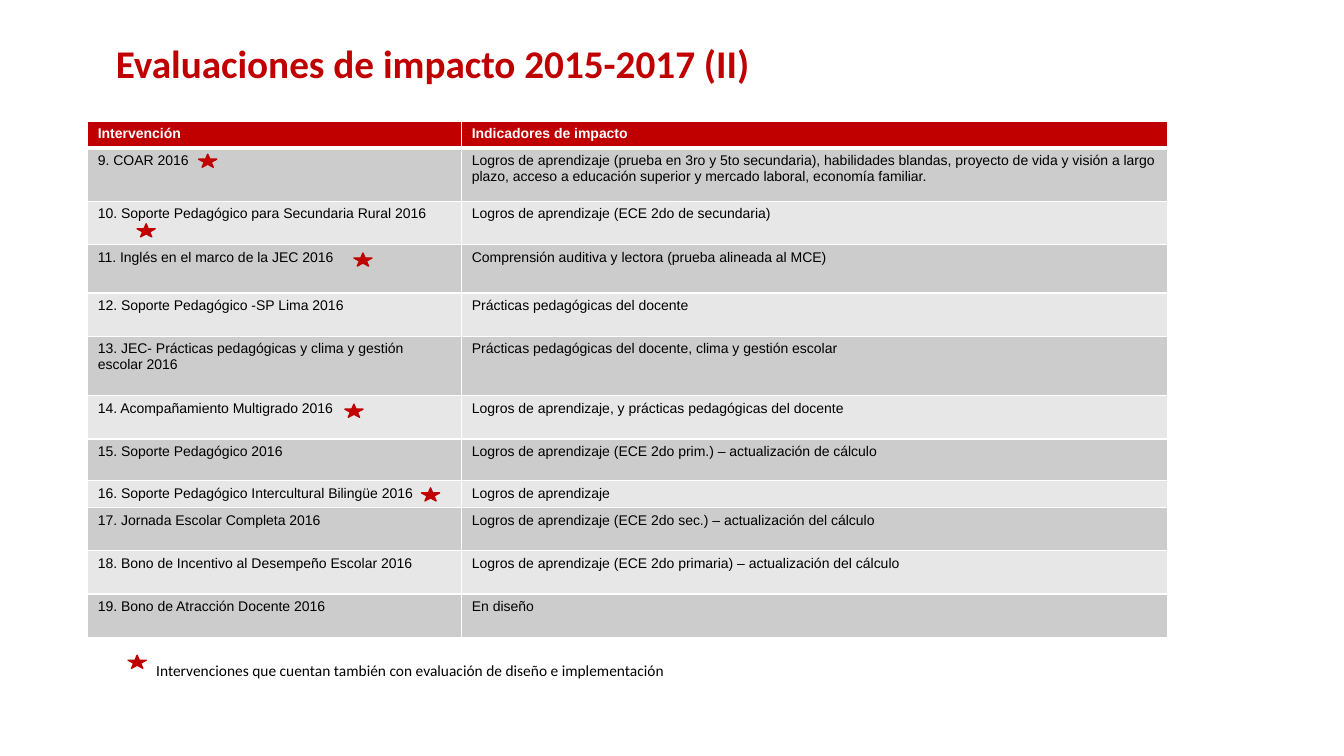
"""Build the slide that lists the 2015-2017 impact evaluations."""
import dataclasses
import itertools
import typing

import lxml.etree
import pptx
import pptx.dml.color
import pptx.enum.shapes
import pptx.enum.text
import pptx.oxml.ns
import pptx.util


@dataclasses.dataclass(frozen=True)
class Theme:
    accent: str = "C00000"
    text: str = "000000"
    inverse: str = "FFFFFF"
    bands: tuple[str, str] = ("CCCCCC", "E7E7E7")
    heading_font: str = "Calibri"
    table_font: str = "Arial"
    title_size: int = 28
    table_size: int = 10
    legend_size: int = 11
    thin_line: int = 1
    thick_line: int = 3


@dataclasses.dataclass(frozen=True)
class Area:
    """Position and size in percent of the slide."""

    left: float
    top: float
    width: float
    height: float


class StarOffset(typing.NamedTuple):
    left: float
    below_row_top: float


class Evaluation(typing.NamedTuple):
    intervention: str
    indicators: str
    height: float = 5.73
    star: typing.Optional[StarOffset] = None


THEME = Theme()
SLIDE_WIDTH = pptx.util.Inches(13.33)
SLIDE_HEIGHT = pptx.util.Inches(7.5)
TITLE_AREA = Area(7.88, 3.47, 64.82, 10.53)
LEGEND_AREA = Area(10.88, 86.8, 39.61, 3.87)
LEGEND_STAR = (9.53, 86.67)
STAR_SIZE = (1.35, 1.73)
TABLE_LEFT, TABLE_TOP = 6.53, 16
COLUMN_WIDTHS = (27.83, 52.51)
SINGLE_LINE = 3.47

ROWS = [
    Evaluation("Intervención", "Indicadores de impacto", SINGLE_LINE),
    Evaluation(
        "9. COAR 2016",
        "Logros de aprendizaje (prueba en 3ro y 5to secundaria), habilidades blandas, "
        "proyecto de vida y visión a largo plazo, acceso a educación superior y "
        "mercado laboral, economía familiar.",
        7.07,
        StarOffset(14.78, 0.93),
    ),
    Evaluation(
        "10. Soporte Pedagógico para Secundaria Rural 2016",
        "Logros de aprendizaje (ECE 2do de secundaria)",
        star=StarOffset(10.2, 3.07),
    ),
    Evaluation(
        "11. Inglés en el marco de la JEC 2016",
        "Comprensión auditiva y lectora (prueba alineada al MCE)",
        6.4,
        StarOffset(26.33, 1.2),
    ),
    Evaluation("12. Soporte Pedagógico -SP Lima 2016", "Prácticas pedagógicas del docente"),
    Evaluation(
        "13. JEC- Prácticas pedagógicas y clima y gestión escolar 2016",
        "Prácticas pedagógicas del docente, clima y gestión escolar",
        7.87,
    ),
    Evaluation(
        "14. Acompañamiento Multigrado 2016",
        "Logros de aprendizaje, y prácticas pedagógicas del docente",
        star=StarOffset(25.66, 1.2),
    ),
    Evaluation(
        "15. Soporte Pedagógico 2016",
        "Logros de aprendizaje (ECE 2do prim.) – actualización de cálculo",
        5.47,
    ),
    Evaluation(
        "16. Soporte Pedagógico Intercultural Bilingüe 2016",
        "Logros de aprendizaje",
        SINGLE_LINE,
        StarOffset(31.36, 1.07),
    ),
    Evaluation(
        "17. Jornada Escolar Completa 2016",
        "Logros de aprendizaje (ECE 2do sec.) – actualización del cálculo",
    ),
    Evaluation(
        "18. Bono de Incentivo al Desempeño Escolar 2016",
        "Logros de aprendizaje (ECE 2do primaria) – actualización del cálculo",
    ),
    Evaluation("19. Bono de Atracción Docente 2016", "En diseño"),
]


def across(percent: float) -> int:
    return round(SLIDE_WIDTH * percent / 100)


def down(percent: float) -> int:
    return round(SLIDE_HEIGHT * percent / 100)


def place(area: Area) -> tuple[int, int, int, int]:
    return across(area.left), down(area.top), across(area.width), down(area.height)


def color(value: str) -> pptx.dml.color.RGBColor:
    return pptx.dml.color.RGBColor.from_string(value)


def write(frame, text: str, *, font: str, size: float, fill: str = THEME.text,
          bold: bool = False, line_spacing: typing.Optional[float] = None) -> None:
    paragraph = frame.paragraphs[0]
    paragraph.line_spacing = line_spacing
    run = paragraph.add_run()
    run.text = text
    run.font.name = font
    run.font.size = pptx.util.Pt(size)
    run.font.bold = bold
    run.font.color.rgb = color(fill)


def draw_borders(cell, top: int, bottom: int) -> None:
    properties = cell._tc.get_or_add_tcPr()
    qualified = pptx.oxml.ns.qn
    widths = {"lnL": THEME.thin_line, "lnR": THEME.thin_line, "lnT": top, "lnB": bottom}
    for index, (side, width) in enumerate(widths.items()):
        line = lxml.etree.Element(qualified(f"a:{side}"), w=str(pptx.util.Pt(width)))
        fill = lxml.etree.SubElement(line, qualified("a:solidFill"))
        lxml.etree.SubElement(fill, qualified("a:srgbClr"), val=THEME.inverse)
        properties.insert(index, line)


def draw_star(slide, left: float, top: float) -> None:
    star = slide.shapes.add_shape(
        pptx.enum.shapes.MSO_SHAPE.STAR_5_POINT, *place(Area(left, top, *STAR_SIZE)))
    star.shadow.inherit = False
    star.fill.solid()
    star.fill.fore_color.rgb = color(THEME.accent)
    star.line.color.rgb = color(THEME.accent)
    star.line.width = pptx.util.Pt(THEME.thin_line)


def draw_table(slide) -> None:
    area = Area(TABLE_LEFT, TABLE_TOP, sum(COLUMN_WIDTHS), sum(row.height for row in ROWS))
    table = slide.shapes.add_table(len(ROWS), len(COLUMN_WIDTHS), *place(area)).table
    for column, width in zip(table.columns, COLUMN_WIDTHS):
        column.width = across(width)
    for index, evaluation in enumerate(ROWS):
        header = index == 0
        table.rows[index].height = down(evaluation.height)
        for cell, text in zip(table.rows[index].cells, evaluation[:2]):
            cell.fill.solid()
            cell.fill.fore_color.rgb = color(
                THEME.accent if header else THEME.bands[(index - 1) % 2])
            draw_borders(
                cell,
                top=THEME.thick_line if index == 1 else THEME.thin_line,
                bottom=THEME.thick_line if header else THEME.thin_line,
            )
            write(cell.text_frame, text, font=THEME.table_font, size=THEME.table_size,
                  fill=THEME.inverse if header else THEME.text, bold=header)


def main() -> None:
    presentation = pptx.Presentation()
    presentation.slide_width, presentation.slide_height = SLIDE_WIDTH, SLIDE_HEIGHT
    slide = presentation.slides.add_slide(presentation.slide_layouts[6])

    title = slide.shapes.add_textbox(*place(TITLE_AREA)).text_frame
    title.word_wrap = True
    title.vertical_anchor = pptx.enum.text.MSO_ANCHOR.MIDDLE
    write(title, "Evaluaciones de impacto 2015-2017 (II)", font=THEME.heading_font,
          size=THEME.title_size, fill=THEME.accent, bold=True, line_spacing=0.9)

    draw_table(slide)
    row_tops = itertools.accumulate((row.height for row in ROWS), initial=TABLE_TOP)
    for evaluation, row_top in zip(ROWS, row_tops):
        if evaluation.star:
            draw_star(slide, evaluation.star.left, row_top + evaluation.star.below_row_top)
    draw_star(slide, *LEGEND_STAR)

    legend = slide.shapes.add_textbox(*place(LEGEND_AREA)).text_frame
    legend.word_wrap = False
    legend.auto_size = pptx.enum.text.MSO_AUTO_SIZE.SHAPE_TO_FIT_TEXT
    write(legend, "Intervenciones que cuentan también con evaluación de diseño e implementación",
          font=THEME.heading_font, size=THEME.legend_size)
    presentation.save("out.pptx")


if __name__ == "__main__":
    main()
